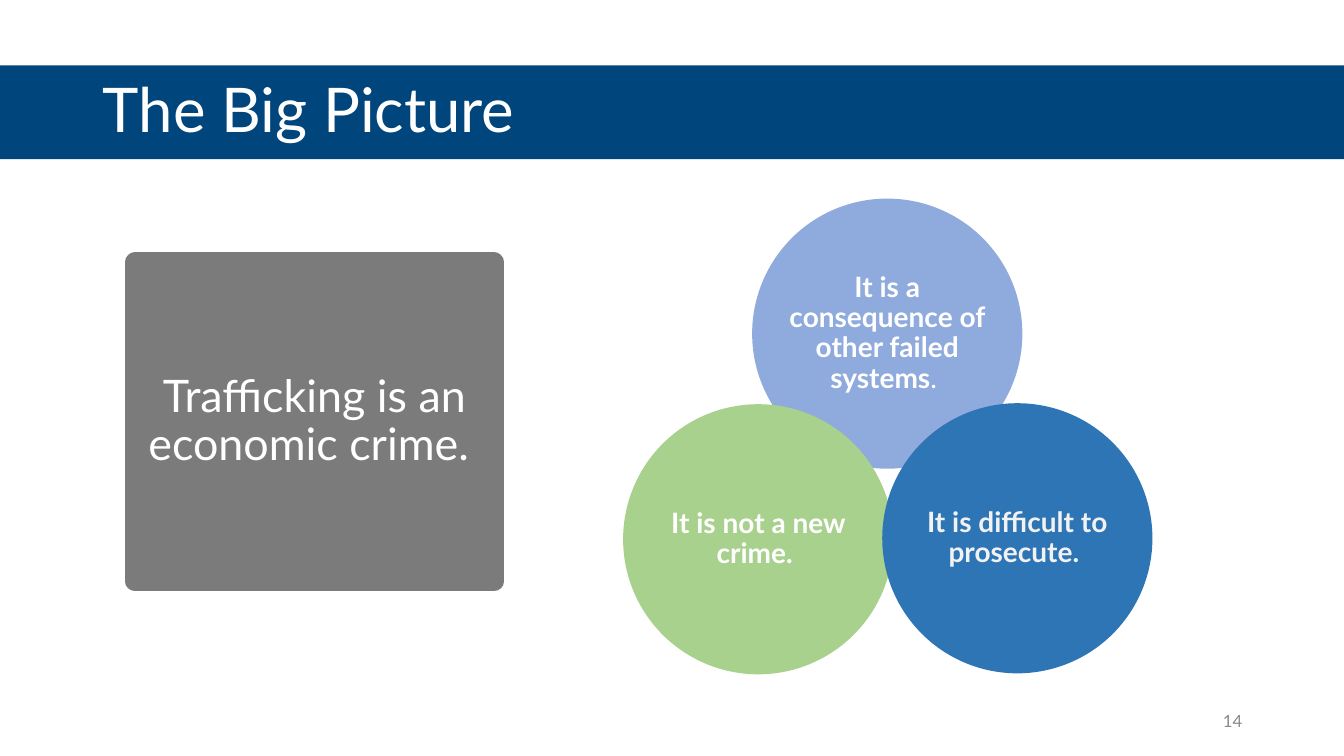
"""Build the slide "The Big Picture" with a key statement and three circles."""
from pptx import Presentation
from pptx.dml.color import RGBColor
from pptx.enum.shapes import MSO_SHAPE
from pptx.enum.text import MSO_ANCHOR, MSO_AUTO_SIZE, PP_ALIGN
from pptx.oxml.xmlchemy import OxmlElement
from pptx.util import Inches, Pt


def color(hex_code):
    return RGBColor.from_string(hex_code)


def write(shape, text, size, hex_code, align, spacing=0.9):
    frame = shape.text_frame
    frame.word_wrap = True
    frame.auto_size = MSO_AUTO_SIZE.NONE
    frame.vertical_anchor = MSO_ANCHOR.MIDDLE
    paragraph = frame.paragraphs[0]
    paragraph.text = text
    paragraph.alignment = align
    paragraph.line_spacing = spacing
    paragraph.font.name = "Lato"
    paragraph.font.size = Pt(size)
    paragraph.font.color.rgb = color(hex_code)
    return paragraph


presentation = Presentation()
presentation.slide_width = Inches(13.33)
presentation.slide_height = Inches(7.5)
slide = presentation.slides.add_slide(presentation.slide_layouts[5])

title = slide.shapes.title
title.left, title.top = Inches(0.92), Inches(0.39)
title.width, title.height = Inches(11.5), Inches(1.45)
write(title, "The Big Picture", 44, "FFFFFF", PP_ALIGN.LEFT)

band = slide.shapes.add_shape(
    MSO_SHAPE.RECTANGLE, 0, Inches(0.65), presentation.slide_width, Inches(0.93)
)
band.shadow.inherit = False
band.fill.solid()
band.fill.fore_color.rgb = color("00457C")
band.line.fill.background()
title.element.addprevious(band.element)

diameter = Inches(2.68)
circles = [
    (7.46, 1.97, "8FAADC", "FFFFFF", "It is a consequence of other failed systems"),
    (6.18, 4.01, "A9D18E", "FFFFFF", "It is not a new crime. "),
    (8.75, 4, "2E75B6", "F2F2F2", "It is difficult to prosecute. "),
]
for left, top, fill, text_color, text in circles:
    circle = slide.shapes.add_shape(
        MSO_SHAPE.OVAL, Inches(left), Inches(top), diameter, diameter
    )
    circle.shadow.inherit = False
    circle.fill.solid()
    circle.fill.fore_color.rgb = color(fill)
    circle.line.fill.background()
    frame = circle.text_frame
    frame.margin_left = frame.margin_right = Inches(-0.03)
    frame.margin_top = frame.margin_bottom = Inches(-0.03)
    paragraph = write(circle, text, 20, text_color, PP_ALIGN.CENTER)
    paragraph.font.bold = True
    if text.endswith("systems"):
        period = paragraph.add_run()
        period.text = ". "
        period.font.bold = False

statement = slide.shapes.add_shape(
    MSO_SHAPE.RECTANGLE, Inches(1.34), Inches(2.6), Inches(3.56), Inches(3.17)
)
statement.shadow.inherit = False
statement.fill.solid()
statement.fill.fore_color.rgb = color("7B7B7B")
statement.line.color.rgb = color("7B7B7B")
statement.line.width = Pt(13.75)
statement.element.spPr.ln.append(OxmlElement("a:round"))
write(statement, "Trafficking is an economic crime. ", 32, "FFFFFF", PP_ALIGN.CENTER)

slide_number = slide.shapes.add_textbox(
    Inches(9.42), Inches(6.95), Inches(3), Inches(0.4)
)
write(slide_number, "14", 12, "898989", PP_ALIGN.RIGHT, 1.0)

presentation.save("out.pptx")
